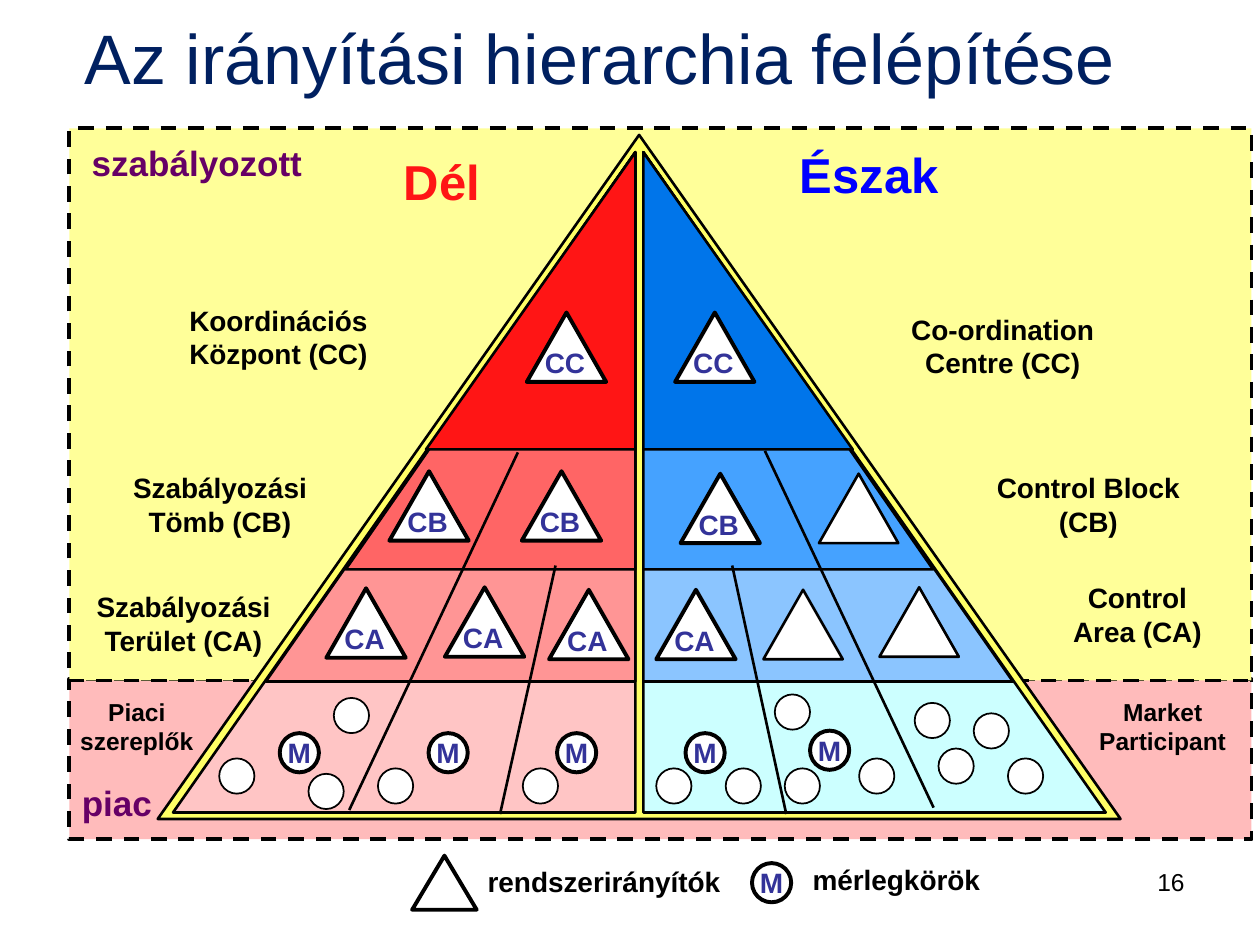
from dataclasses import dataclass

from pptx import Presentation
from pptx.dml.color import RGBColor
from pptx.enum.dml import MSO_LINE_DASH_STYLE as Dash
from pptx.enum.shapes import MSO_CONNECTOR as Connector, MSO_SHAPE as Preset
from pptx.enum.text import MSO_ANCHOR as Anchor, PP_ALIGN as Align
from pptx.oxml.ns import qn
from pptx.oxml.xmlchemy import OxmlElement
from pptx.util import Cm, Pt


@dataclass(frozen=True)
class Theme:
    font: str = "Arial"
    black: str = "000000"
    white: str = "FFFFFF"
    navy: str = "002060"
    code: str = "333399"
    purple: str = "660066"
    south: str = "FF1515"
    north: str = "0000FF"
    regulated: str = "FFFF99"
    market: str = "FFBBBB"
    frame: str = "FFFF66"
    # Pyramid tiers from the widest to the narrowest
    south_tiers: tuple = ("FFC5C5", "FF9595", "FF6565", "FF1515")
    north_tiers: tuple = ("CCFFFF", "8BC5FF", "45A2FF", "0075EA")
    title_size: float = 40
    side_size: float = 28
    zone_size: float = 20
    label_size: float = 16
    small_size: float = 14
    thick: float = 2.25
    medium: float = 1.5
    thin: float = 1


THEME = Theme()

# Sizes and positions in cm
TIER_SIZES = [(9.32, 13.31), (7.45, 10.67), (5.84, 8.41), (4.22, 5.99)]
TIER_TOP, SOUTH_EDGE, NORTH_EDGE = 3.07, 12.81, 12.97
OPERATOR_SIZE = (1.6, 1.4)
BALANCE_SIZE, MEMBER_SIZE = 0.79, 0.71

DIVIDERS = [
    (10.44, 9.12, 7.04, 16.33), (15.42, 9.09, 18.82, 16.28),
    (11.2, 11.4, 10.08, 16.41), (14.76, 11.4, 15.85, 16.41),
]
OPERATORS = [
    ("CC", 13.61, 6.3), ("CC", 10.62, 6.3),
    ("CB", 7.85, 9.5), ("CB", 13.72, 9.55), ("CB", 10.52, 9.5),
    ("CA", 13.23, 11.89), ("CA", 6.58, 11.86),
    ("CA", 8.97, 11.84), ("CA", 11.07, 11.89),
    ("", 17.73, 11.84), ("", 16.51, 9.55), ("", 15.39, 11.89),
]
BALANCE_GROUPS = [
    (13.82, 14.78), (5.64, 14.78), (8.64, 14.78), (11.23, 14.78), (16.33, 14.73),
]
MEMBERS = [
    (19.63, 14.38), (20.32, 15.29), (18.92, 15.09), (17.32, 15.29),
    (15.62, 14), (13.23, 15.49), (14.63, 15.49), (18.44, 14.17),
    (15.82, 15.49), (10.54, 15.49), (7.62, 15.49), (4.42, 15.29),
    (6.73, 14.07), (6.22, 15.6),
]
LEVEL_LABELS = [
    ("Koordinációs Központ (CC)", 2.82, 5.99, 5.59),
    ("Szabályozási Tömb (CB)", 1.63, 9.37, 5.61),
    ("Szabályozási Terület (CA)", 1.3, 11.76, 4.8),
    ("Co-ordination Centre (CC)", 17.42, 6.17, 5.59),
    ("Control Block (CB)", 19.84, 9.37, 4.2),
    ("Control Area (CA)", 21.23, 11.58, 3.4),
]
MARKET_LABELS = [
    ("Piaci szereplők", 1.3, 13.92, 2.92),
    ("Market Participant", 21.84, 13.92, 3.2),
]


def write(frame, text, size=THEME.label_size, color=THEME.black, bold=True,
          align=Align.CENTER, anchor=Anchor.TOP, wrap=True):
    frame.word_wrap = wrap
    frame.vertical_anchor = anchor
    paragraph = frame.paragraphs[0]
    paragraph.alignment = align
    run = paragraph.add_run()
    run.text = text
    run.font.name = THEME.font
    run.font.size = Pt(size)
    run.font.bold = bold
    run.font.color.rgb = RGBColor.from_string(color)


def add_label(slide, text, left, top, width, height, **text_format):
    label = slide.shapes.add_textbox(Cm(left), Cm(top), Cm(width), Cm(height))
    write(label.text_frame, text, **text_format)


def add_figure(slide, preset, left, top, width, height, fill=THEME.white,
               weight=THEME.medium, dash=None, mirrored=False):
    figure = slide.shapes.add_shape(preset, Cm(left), Cm(top), Cm(width), Cm(height))
    figure.shadow.inherit = False
    figure.fill.solid()
    figure.fill.fore_color.rgb = RGBColor.from_string(fill)
    figure.line.color.rgb = RGBColor.from_string(THEME.black)
    figure.line.width = Pt(weight)
    if dash:
        figure.line.dash_style = dash
    if mirrored:
        figure._element.spPr.find(qn("a:xfrm")).set("flipH", "1")
    return figure


def add_divider(slide, *ends):
    divider = slide.shapes.add_connector(Connector.STRAIGHT, *map(Cm, ends))
    divider.line.color.rgb = RGBColor.from_string(THEME.black)
    divider.line.width = Pt(THEME.medium)
    divider._element.spPr.append(OxmlElement("a:effectLst"))


def add_operator(slide, code, left, top):
    weight = THEME.thick if code else THEME.medium
    add_figure(slide, Preset.ISOSCELES_TRIANGLE, left, top, *OPERATOR_SIZE, weight=weight)
    if code:
        add_label(slide, code, left - 0.18, top + 0.55, 1.9, 0.94, color=THEME.code)


def add_balance_group(slide, left, top):
    group = add_figure(slide, Preset.OVAL, left, top, BALANCE_SIZE, BALANCE_SIZE,
                       weight=THEME.thick)
    write(group.text_frame, "M", color=THEME.code, anchor=Anchor.MIDDLE, wrap=False)


def add_pyramid(slide):
    add_figure(slide, Preset.ISOSCELES_TRIANGLE, 3.18, 2.72, 19.41, 13.79, fill=THEME.frame)
    tiers = zip(TIER_SIZES, THEME.south_tiers, THEME.north_tiers)
    for (width, height), south, north in tiers:
        add_figure(slide, Preset.RIGHT_TRIANGLE, SOUTH_EDGE - width, TIER_TOP,
                   width, height, fill=south, mirrored=True)
        add_figure(slide, Preset.RIGHT_TRIANGLE, NORTH_EDGE, TIER_TOP,
                   width, height, fill=north)
    for ends in DIVIDERS:
        add_divider(slide, *ends)


def add_legend(slide):
    add_figure(slide, Preset.ISOSCELES_TRIANGLE, 8.31, 17.25, 1.3, 1.09, weight=THEME.thick)
    add_label(slide, "rendszerirányítók", 9.58, 17.3, 5.41, 0.94, align=Align.LEFT)
    add_balance_group(slide, 15.16, 17.4)
    add_label(slide, "mérlegkörök", 16.13, 17.27, 5.41, 0.94, align=Align.LEFT)


def main():
    deck = Presentation()
    deck.slide_width, deck.slide_height = Cm(25.4), Cm(19.05)
    slide = deck.slides.add_slide(deck.slide_layouts[6])

    # Market and regulated zones
    for top, height, fill in [(13.69, 3.23, THEME.market), (2.59, 11.13, THEME.regulated)]:
        add_figure(slide, Preset.RECTANGLE, 1.4, top, 23.83, height, fill=fill,
                   weight=THEME.thick, dash=Dash.DASH)

    # Pyramid with its two sides
    add_pyramid(slide)
    add_label(slide, "Dél", 6.22, 2.92, 5.38, 1.45, size=THEME.side_size, color=THEME.south)
    add_label(slide, "Észak", 14.83, 2.79, 5.38, 1.45, size=THEME.side_size, color=THEME.north)

    # Operators, balance groups and their members
    for operator in OPERATORS:
        add_operator(slide, *operator)
    for position in BALANCE_GROUPS:
        add_balance_group(slide, *position)
    for left, top in MEMBERS:
        add_figure(slide, Preset.OVAL, left, top, MEMBER_SIZE, MEMBER_SIZE, weight=THEME.thin)

    # Level and zone names
    for text, left, top, width in LEVEL_LABELS:
        add_label(slide, text, left, top, width, 1.63)
    for text, left, top, width in MARKET_LABELS:
        add_label(slide, text, left, top, width, 1.45, size=THEME.small_size)
    for text, left, top, width in [("szabályozott", 1.6, 2.72, 4.8), ("piac", 1.4, 15.62, 2.01)]:
        add_label(slide, text, left, top, width, 1.09, size=THEME.zone_size,
                  color=THEME.purple, align=Align.LEFT)

    # Legend, title and slide number
    add_legend(slide)
    add_label(slide, "Az irányítási hierarchia felépítése", 0, 0.08, 24.18, 2.13,
              size=THEME.title_size, color=THEME.navy, bold=False, anchor=Anchor.MIDDLE)
    add_label(slide, "16", 18.21, 17.35, 5.92, 1.32, size=THEME.small_size,
              bold=False, align=Align.RIGHT)

    deck.save("out.pptx")


if __name__ == "__main__":
    main()
